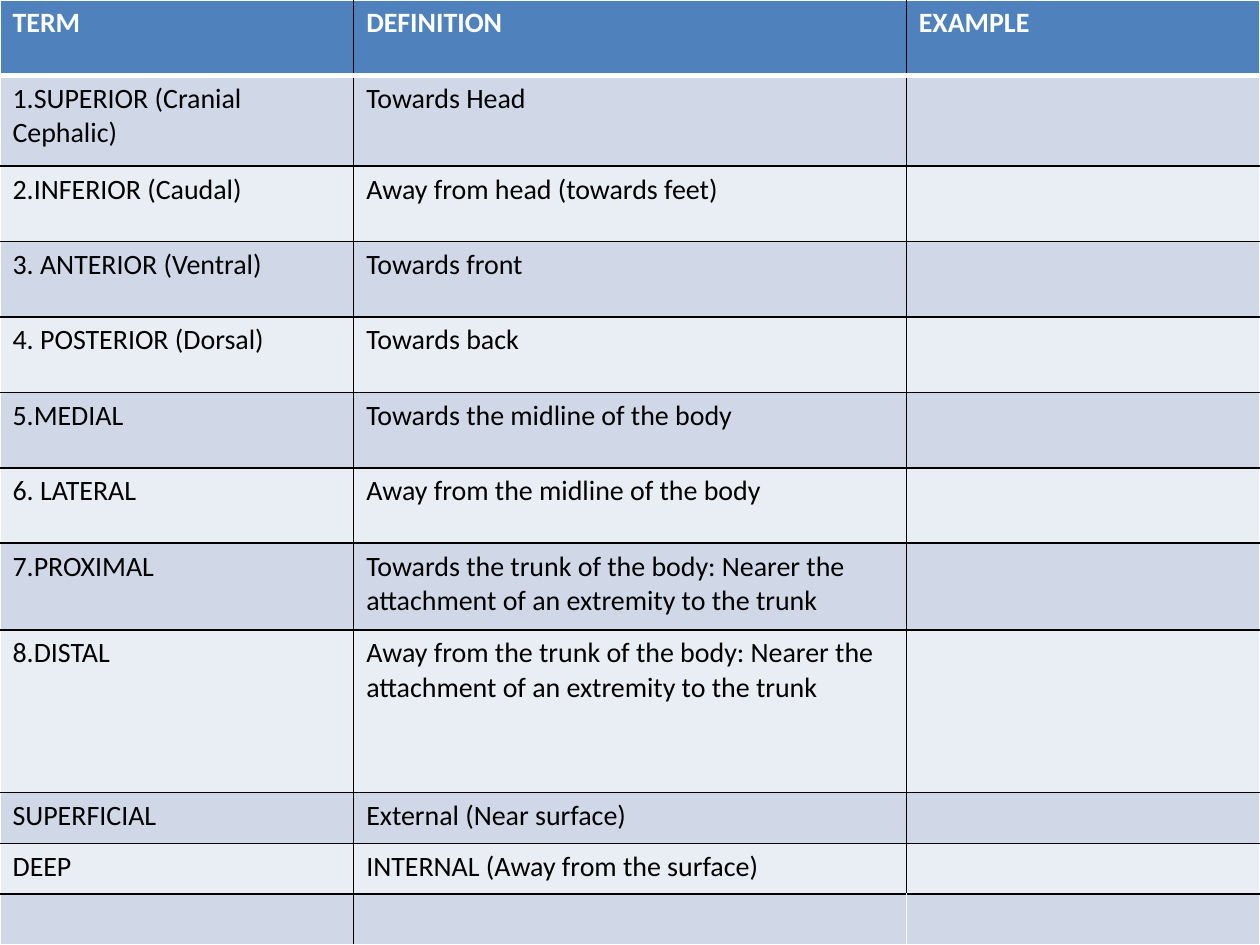
from lxml import etree
from pptx import Presentation
from pptx.dml.color import RGBColor
from pptx.oxml.ns import qn
from pptx.util import Cm, Pt

WHITE = RGBColor(0xFF, 0xFF, 0xFF)
BLACK = RGBColor(0x00, 0x00, 0x00)
HEADER_BLUE = RGBColor(0x4F, 0x81, 0xBD)
BAND_DARK = RGBColor(0xD0, 0xD8, 0xE8)
BAND_LIGHT = RGBColor(0xE9, 0xED, 0xF4)

COL_WIDTHS = [7.13, 11.14, 7.13]
# Row height in cm, term, definition, example
ROWS = [
    (1.52, "TERM", "DEFINITION", "EXAMPLE"),
    (1.83, "1.SUPERIOR (Cranial Cephalic)", "Towards Head", ""),
    (1.52, "2.INFERIOR (Caudal)", "Away from head (towards feet)", ""),
    (1.52, "3. ANTERIOR (Ventral)", "Towards front", ""),
    (1.52, "4. POSTERIOR (Dorsal)", "Towards back", ""),
    (1.52, "5.MEDIAL", "Towards the midline of the body", ""),
    (1.52, "6. LATERAL", "Away from the midline of the body", ""),
    (1.75, "7.PROXIMAL",
     "Towards the trunk of the body: Nearer the attachment of an extremity to the trunk", ""),
    (3.28, "8.DISTAL",
     "Away from the trunk of the body: Nearer the attachment of an extremity to the trunk", ""),
    (1.02, "SUPERFICIAL", "External (Near surface)", ""),
    (1.02, "DEEP", "INTERNAL (Away from the surface)", ""),
    (1.02, "", "", ""),
]
LAST_ROW, LAST_COL = len(ROWS) - 1, len(COL_WIDTHS) - 1


def add_border(cell, side, color, width=1):
    """Draw one cell edge; call in the order L, R, T, B and before the fill."""
    tc_pr = cell._tc.get_or_add_tcPr()
    ln = etree.SubElement(tc_pr, qn(f"a:ln{side}"), w=str(Pt(width)))
    solid = etree.SubElement(ln, qn("a:solidFill"))
    etree.SubElement(solid, qn("a:srgbClr"), val=str(color))


prs = Presentation()
prs.slide_width, prs.slide_height = Cm(25.4), Cm(19.05)
s = prs.slides.add_slide(prs.slide_layouts[6])

table = s.shapes.add_table(
    len(ROWS), len(COL_WIDTHS), Cm(0), Cm(0), prs.slide_width, prs.slide_height
).table
for column, width in zip(table.columns, COL_WIDTHS):
    column.width = Cm(width)

for i, (height, *texts) in enumerate(ROWS):
    table.rows[i].height = Cm(height)
    is_header = i == 0
    for j, text in enumerate(texts):
        cell = table.cell(i, j)

        # Outer edges are white, and so is the last inner edge of the empty row
        white_from = LAST_COL if i == LAST_ROW else LAST_COL + 1
        add_border(cell, "L", WHITE if j == 0 or j >= white_from else BLACK)
        add_border(cell, "R", WHITE if j == LAST_COL or j + 1 >= white_from else BLACK)
        add_border(cell, "T", WHITE if i <= 1 else BLACK, 3 if i == 1 else 1)
        add_border(cell, "B", WHITE if i in (0, LAST_ROW) else BLACK, 3 if is_header else 1)

        cell.fill.solid()
        band = BAND_DARK if i % 2 else BAND_LIGHT
        cell.fill.fore_color.rgb = HEADER_BLUE if is_header else band

        cell.text = text
        font = cell.text_frame.paragraphs[0].font
        font.name, font.size, font.bold = "Calibri", Pt(16), is_header
        font.color.rgb = WHITE if is_header else BLACK

prs.save("out.pptx")
